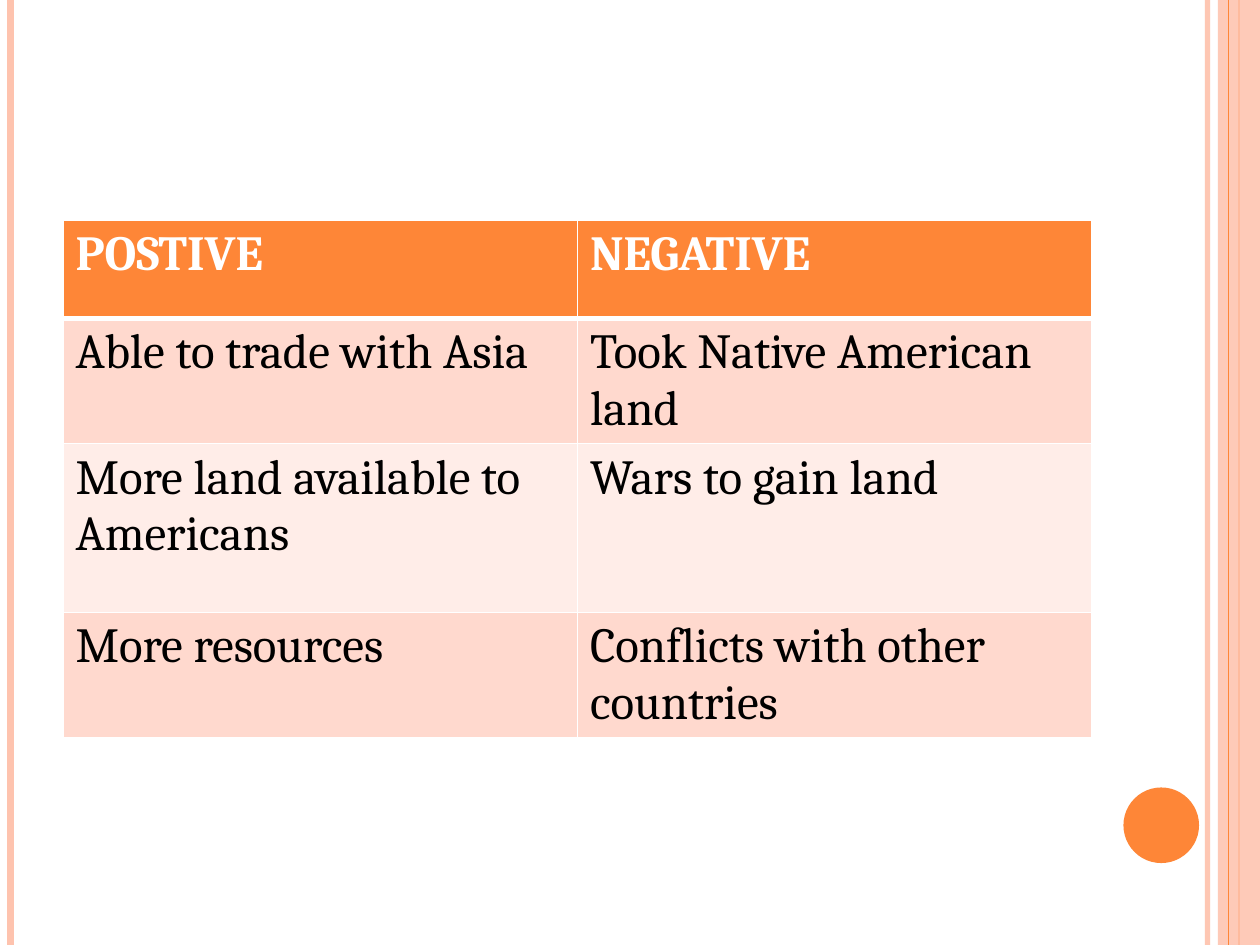
from pptx import Presentation
from pptx.dml.color import RGBColor
from pptx.enum.shapes import MSO_CONNECTOR, MSO_SHAPE
from pptx.oxml.ns import qn
from pptx.util import Pt
from lxml import etree

STRAIGHT = MSO_CONNECTOR.STRAIGHT
RECTANGLE = MSO_SHAPE.RECTANGLE
OVAL = MSO_SHAPE.OVAL

WIDTH, HEIGHT = 720, 540
ORANGE, PEACH = "FE8637", "FEC3AE"
WHITE, BLACK = "FFFFFF", "000000"
BANDS = ["FFD9CE", "FFEDE8"]


def color(value):
    return RGBColor.from_string(value)


def set_alpha(fill_parent, percent):
    """Make the solid fill below this element partly transparent."""
    rgb = fill_parent.find(qn("a:solidFill")).find(qn("a:srgbClr"))
    etree.SubElement(rgb, qn("a:alpha"), val=str(percent * 1000))


class SlideBuilder:
    font = "Cambria"
    text_size = 28

    def __init__(self, slide):
        self.slide = slide

    def vertical_line(self, x, line_color, width, alpha=None):
        line = self.slide.shapes.add_connector(STRAIGHT, Pt(x), 0, Pt(x), Pt(HEIGHT))
        line.line.color.rgb = color(line_color)
        line.line.width = Pt(width)
        properties = line._element.spPr
        if alpha:
            set_alpha(properties.find(qn("a:ln")), alpha)
        etree.SubElement(properties, qn("a:effectLst"))

    def shape(self, kind, left, top, width, height, fill, alpha=None):
        shape = self.slide.shapes.add_shape(kind, Pt(left), Pt(top), Pt(width), Pt(height))
        shape.shadow.inherit = False
        shape.fill.solid()
        shape.fill.fore_color.rgb = color(fill)
        shape.line.fill.background()
        if alpha:
            set_alpha(shape._element.spPr, alpha)

    def border(self, cell, side, width):
        line = etree.SubElement(cell._tc.get_or_add_tcPr(), qn(f"a:ln{side}"), w=str(Pt(width)))
        fill = etree.SubElement(line, qn("a:solidFill"))
        etree.SubElement(fill, qn("a:srgbClr"), val=WHITE)

    def cell(self, cell, text, row):
        header = row == 0
        # Borders come before the fill; the rule under the header is thicker
        widths = {"L": 1, "R": 1, "T": 3 if row == 1 else 1, "B": 3 if header else 1}
        for side, width in widths.items():
            self.border(cell, side, width)
        cell.fill.solid()
        cell.fill.fore_color.rgb = color(ORANGE if header else BANDS[(row - 1) % 2])
        run = cell.text_frame.paragraphs[0].add_run()
        run.text = text
        run.font.name = self.font
        run.font.size = Pt(self.text_size)
        run.font.bold = header
        run.font.color.rgb = color(WHITE if header else BLACK)

    def table(self, left, top, column_width, row_heights, rows):
        columns = len(rows[0])
        table = self.slide.shapes.add_table(
            len(rows), columns, Pt(left), Pt(top),
            Pt(column_width * columns), Pt(sum(row_heights))).table
        for column in table.columns:
            column.width = Pt(column_width)
        for index, (height, texts) in enumerate(zip(row_heights, rows)):
            table.rows[index].height = Pt(height)
            for column, text in enumerate(texts):
                self.cell(table.cell(index, column), text, index)


def main():
    presentation = Presentation()
    presentation.slide_width, presentation.slide_height = Pt(WIDTH), Pt(HEIGHT)
    builder = SlideBuilder(presentation.slides.add_slide(presentation.slide_layouts[6]))

    # Side stripes and circle
    builder.vertical_line(690, PEACH, 3, alpha=93)
    builder.vertical_line(6, PEACH, 4.5)
    builder.vertical_line(708, ORANGE, 1.5)
    builder.shape(RECTANGLE, 696, 0, 24, HEIGHT, PEACH, alpha=87)
    builder.vertical_line(702, ORANGE, 0.75)
    builder.shape(OVAL, 642, 450, 43.2, 43.2, ORANGE)

    # Comparison table
    builder.table(36, 126, 294, [56, 56, 96.5, 56], [
        ("POSTIVE", "NEGATIVE"),
        ("Able to trade with Asia", "Took Native American land"),
        ("More land available to Americans", "Wars to gain land"),
        ("More resources", "Conflicts with other countries"),
    ])

    presentation.save("out.pptx")


if __name__ == "__main__":
    main()
